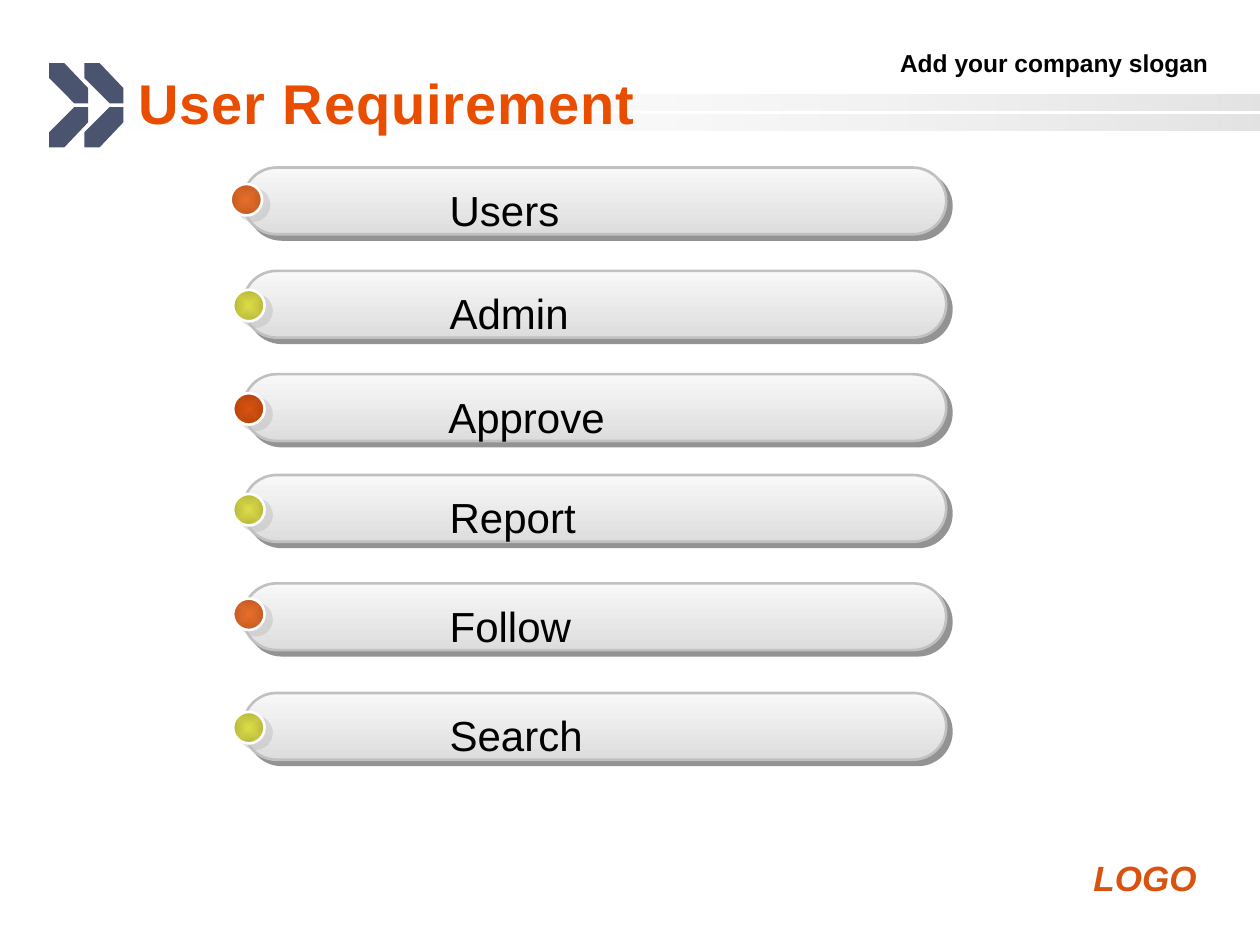
from lxml.etree import SubElement
from pptx import Presentation
from pptx.dml.color import RGBColor
from pptx.enum.shapes import MSO_SHAPE
from pptx.enum.text import MSO_ANCHOR, MSO_AUTO_SIZE, PP_ALIGN
from pptx.oxml.ns import qn
from pptx.util import Inches, Pt

THEME = {
    "font": "Arial",
    "text": "000000",
    "chevron": "4B546F",
    "title": ("E84D00", "A43600"),
    "logo": "D9520F",
    "logo_shadow": "808080",
    "band": ("FFFFFF", "969696"),
    "pill": ("F8F8F8", "DDDDDD"),
    "pill_line": "C0C0C0",
    "pill_shadow": "292929",
    "dot_line": "FFFFFF",
    "dot_shadow": "C0C0C0",
    "orange": ("E96E29", "C35C22"),
    "lime": ("DCDC48", "B8B83C"),
    "red": ("D9520F", "B6450D"),
    "title_size": Pt(32),
    "label_size": Pt(24),
    "logo_size": Pt(20),
    "slogan_size": Pt(14),
}


def paint_gradient(fill, colors, angle=0, start=0):
    """Fill with two colours; the angle runs counter-clockwise."""
    fill.gradient()
    fill.gradient_angle = angle
    for stop, color, position in zip(fill.gradient_stops, colors, (start, 1)):
        stop.color.rgb = RGBColor.from_string(color)
        stop.position = position


def cast_shadow(effects, color, distance, degrees, opacity):
    shadow = SubElement(effects, qn("a:outerShdw"), blurRad="0", dist=str(Pt(distance)),
                        dir=str(degrees * 60000), algn="ctr", rotWithShape="0")
    tint = SubElement(shadow, qn("a:srgbClr"), val=color)
    SubElement(tint, qn("a:alpha"), val=str(opacity * 1000))


prs = Presentation()
prs.slide_width, prs.slide_height = Inches(10), Inches(7.5)
slide = prs.slides.add_slide(prs.slide_layouts[6])
shapes = slide.shapes

# Header bands fading in towards the right edge
for top in (0.75, 0.91):
    band = shapes.add_shape(MSO_SHAPE.RECTANGLE, Inches(0.75), Inches(top),
                            Inches(9.25), Inches(0.13))
    band.shadow.inherit = False
    band.line.fill.background()
    paint_gradient(band.fill, THEME["band"])
    for tint, opacity in zip(band._element.spPr.iter(qn("a:schemeClr"), qn("a:srgbClr")), (0, 27)):
        SubElement(tint, qn("a:alpha"), val=str(opacity * 1000))

# Double chevron: the lower halves mirror the upper ones
UPPER_HALF = [(0.39, 0.5), (0.39, 0.62), (0.59, 0.82), (0.7, 0.82), (0.7, 0.7), (0.51, 0.5)]
for shift in (0, 0.28):
    for mirrored in (False, True):
        points = [(Inches(x + shift), Inches(1.67 - y if mirrored else y)) for x, y in UPPER_HALF]
        outline = shapes.build_freeform(*points[0])
        outline.add_line_segments(points[1:], close=True)
        chevron = outline.convert_to_shape()
        chevron.shadow.inherit = False
        chevron.fill.solid()
        chevron.fill.fore_color.rgb = RGBColor.from_string(THEME["chevron"])
        chevron.line.fill.background()

# Requirement: label, label left and width, pill top, dot left and top, dot colour
REQUIREMENTS = [
    ("Users", 3.47, 1.08, 1.33, 1.83, 1.46, "orange"),
    ("Admin", 3.47, 1.16, 2.15, 1.85, 2.3, "lime"),
    ("Approve", 3.46, 1.46, 2.97, 1.85, 3.12, "red"),
    ("Report", 3.47, 1.21, 3.77, 1.85, 3.92, "lime"),
    ("Follow", 3.47, 1.18, 4.63, 1.85, 4.75, "orange"),
    ("Search", 3.47, 1.27, 5.5, 1.85, 5.65, "lime"),
]
LABEL = {"size": THEME["label_size"]}
texts = [
    ("Add your company slogan", (3.67, 0.33, 6.02, 0.33), True, PP_ALIGN.RIGHT,
     {"size": THEME["slogan_size"], "bold": True}),
]
for label, label_left, label_width, top, dot_left, dot_top, dot_color in REQUIREMENTS:
    pill = shapes.add_shape(MSO_SHAPE.ROUNDED_RECTANGLE, Inches(1.93), Inches(top),
                            Inches(5.58), Inches(0.53))
    pill.adjustments[0] = 0.5
    paint_gradient(pill.fill, THEME["pill"], angle=270)

    dot = shapes.add_shape(MSO_SHAPE.OVAL, Inches(dot_left), Inches(dot_top),
                           Inches(0.25), Inches(0.25))
    paint_gradient(dot.fill, THEME[dot_color])
    gradient = dot._element.spPr.find(qn("a:gradFill"))
    gradient.remove(gradient.find(qn("a:lin")))
    radial = SubElement(gradient, qn("a:path"), path="shape")
    SubElement(radial, qn("a:fillToRect"), l="50000", t="50000", r="50000", b="50000")

    for part, name, distance, degrees in ((pill, "pill", 4.2, 45), (dot, "dot", 5, 37)):
        part.line.color.rgb = RGBColor.from_string(THEME[name + "_line"])
        part.line.width = Pt(1.5)
        part.shadow.inherit = False
        effects = part._element.spPr.find(qn("a:effectLst"))
        cast_shadow(effects, THEME[name + "_shadow"], distance, degrees, opacity=50)
    texts.append((label, (label_left, top + 0.085, label_width, 0.5), False, PP_ALIGN.LEFT, LABEL))

texts += [
    ("LOGO", (8.58, 6.75, 1.17, 0.43), True, PP_ALIGN.LEFT,
     {"size": THEME["logo_size"], "bold": True, "italic": True}),
    ("User Requirement", (1, 0.5, 8.25, 0.62), True, PP_ALIGN.LEFT,
     {"size": THEME["title_size"], "bold": True}),
]
runs = {}
for wording, place, wraps, alignment, formats in texts:
    frame = shapes.add_textbox(*map(Inches, place)).text_frame
    frame.word_wrap = wraps
    frame.auto_size = MSO_AUTO_SIZE.SHAPE_TO_FIT_TEXT
    paragraph = frame.paragraphs[0]
    paragraph.alignment = alignment
    run = runs[wording] = paragraph.add_run()
    run.text = wording
    run.font.name = THEME["font"]
    run.font.color.rgb = RGBColor.from_string(THEME["text"])
    for attribute, value in formats.items():
        setattr(run.font, attribute, value)

# The last text is the title
frame.auto_size = MSO_AUTO_SIZE.NONE
frame.vertical_anchor = MSO_ANCHOR.MIDDLE
paint_gradient(run.font.fill, THEME["title"], angle=270, start=0.25)
run.font._element.set("spc", "50")

logo = runs["LOGO"].font
logo.color.rgb = RGBColor.from_string(THEME["logo"])
logo_color = logo._element.find(qn("a:solidFill"))
effects = SubElement(logo._element, qn("a:effectLst"))
logo_color.addnext(effects)
cast_shadow(effects, THEME["logo_shadow"], 2.8, 45, opacity=100)

prs.save("out.pptx")
